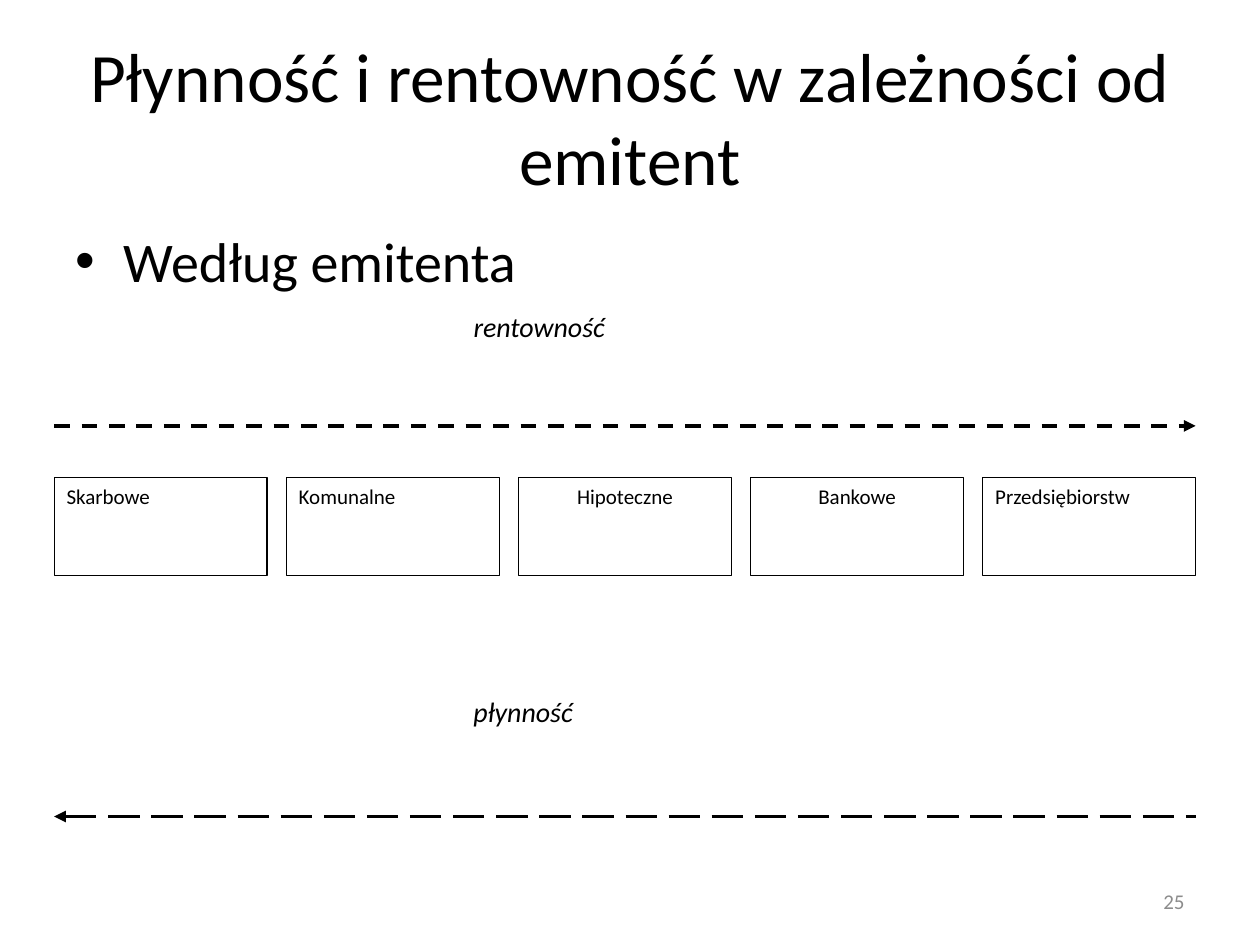
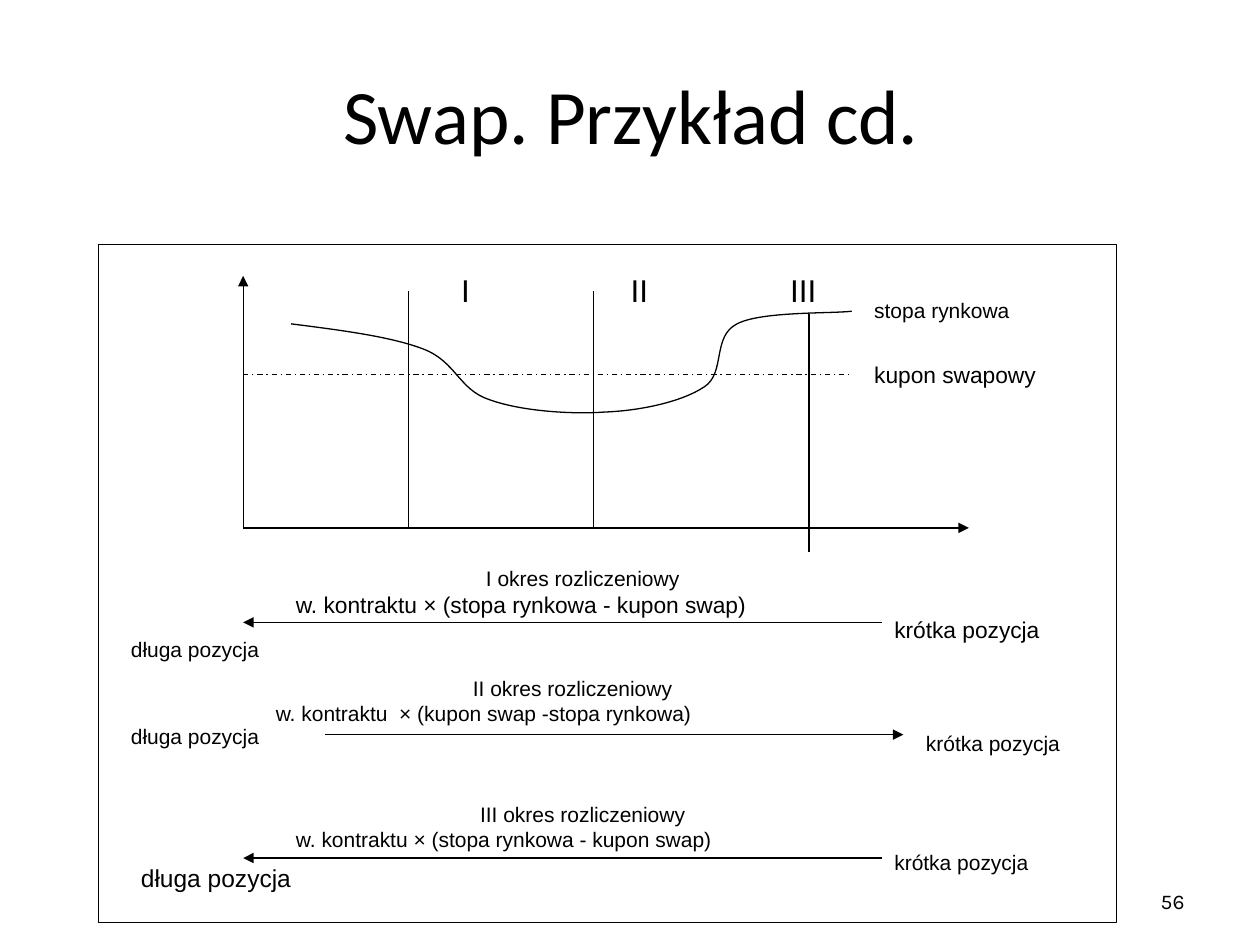
from lxml import etree
from pptx import Presentation
from pptx.dml.color import RGBColor
from pptx.enum.dml import MSO_LINE
from pptx.enum.shapes import MSO_CONNECTOR, MSO_SHAPE
from pptx.enum.text import MSO_ANCHOR, PP_ALIGN
from pptx.oxml.ns import qn
from pptx.util import Pt

SCALE = 9144  # EMU in one px, 100 px to the inch
BLANK_LAYOUT = 6
LEFT, CENTER, RIGHT = PP_ALIGN.LEFT, PP_ALIGN.CENTER, PP_ALIGN.RIGHT
TOP, MIDDLE = MSO_ANCHOR.TOP, MSO_ANCHOR.MIDDLE
DASH, LONG_DASH, DASH_DOT = MSO_LINE.DASH, MSO_LINE.LONG_DASH, MSO_LINE.DASH_DOT
START, END = "a:headEnd", "a:tailEnd"

BLACK, WHITE, GREY = "000000", "FFFFFF", "8C8C8C"
HEADING_FONT, DIAGRAM_FONT, NUMBER_FONT = "Calibri", "Arial", "Karla"
THIN, THICK = 0.75, 2.25
NUMBER_BOX = (717, 695, 233, 40)

# Slide 1: issuers
ISSUERS = [("Skarbowe", LEFT), ("Komunalne", LEFT), ("Hipoteczne", CENTER),
           ("Bankowe", CENTER), ("Przedsiębiorstw", LEFT)]
ROW_LEFT, ROW_RIGHT, ROW_TOP = 43, 949, 379
ISSUER_WIDTH, ISSUER_HEIGHT = 169, 78
# caption, its box, arrow height, dash, arrowhead end
SCALES = [("rentowność", (366, 241, 138, 63), 338, DASH, END),
          ("płynność", (366, 546, 107, 52), 648, LONG_DASH, START)]

# Slide 2: swap
FRAME = (78, 194, 808, 538)
AXIS_LEFT, AXIS_TOP, AXIS_BOTTOM, AXIS_RIGHT = 193, 219, 419, 769
COUPON_HEIGHT, COUPON_RIGHT = 297, 676
# numeral, its box, settlement date line: x, top, bottom
PERIODS = [("I", (350, 210, 39, 40), (324, 231, 419)),
           ("II", (484, 210, 47, 40), (471, 231, 419)),
           ("III", (610, 210, 55, 40), (642, 249, 438))]
# start point, then two control points and an end point for each curve
MARKET_RATE = [
    (231, 257),
    (270, 262), (310, 267), (336, 277),
    (362, 287), (364, 309), (388, 317),
    (412, 326), (452, 329), (480, 327),
    (508, 326), (541, 319), (559, 307),
    (576, 296), (565, 267), (585, 257),
    (604, 247), (659, 249), (676, 247),
]
LABELS = [
    ("stopa rynkowa", (684, 231, 196, 38), 12),
    ("kupon swapowy", (684, 281, 196, 38), 13),
    ("długa pozycja", (94, 500, 131, 33), 12),
    ("krótka pozycja", (700, 484, 174, 35), 13),
    ("długa pozycja", (94, 569, 131, 33), 12),
    ("krótka pozycja", (725, 575, 132, 30), 12),
    ("długa pozycja", (102, 680, 147, 33), 14),
    ("krótka pozycja", (700, 669, 147, 38), 12),
]
# heading, formula, formula size, box, arrow: left, right, y, arrowhead end
SETTLEMENTS = [
    ("I okres rozliczeniowy", "w. kontraktu × (stopa rynkowa - kupon swap)", 13,
     (225, 444, 475, 50), (193, 700, 494, START)),
    ("II okres rozliczeniowy", "w. kontraktu  × (kupon swap -stopa rynkowa)", 12,
     (209, 531, 491, 50), (258, 717, 583, END)),
    ("III okres rozliczeniowy", "w. kontraktu × (stopa rynkowa - kupon swap)", 12,
     (225, 631, 475, 50), (193, 700, 681, START)),
]


def px(value):
    return round(value * SCALE)


def color(value):
    return RGBColor.from_string(value)


def style_line(line, width, dash=None):
    line.color.rgb = color(BLACK)
    line.width = Pt(width)
    if dash:
        line.dash_style = dash


def add_rectangle(slide, box, fill=None, outlined=False):
    shape = slide.shapes.add_shape(MSO_SHAPE.RECTANGLE, *map(px, box))
    shape.shadow.inherit = False
    if fill:
        shape.fill.solid()
        shape.fill.fore_color.rgb = color(fill)
    else:
        shape.fill.background()
    if outlined:
        style_line(shape.line, THIN)
    else:
        shape.line.fill.background()
    return shape


def add_paragraph(shape, text, size, font, align=LEFT, ink=BLACK, italic=False, first=True):
    frame = shape.text_frame
    paragraph = frame.paragraphs[0] if first else frame.add_paragraph()
    paragraph.alignment = align
    run = paragraph.add_run()
    run.text = text
    run.font.size = Pt(size)
    run.font.name = font
    run.font.italic = italic
    run.font.color.rgb = color(ink)
    return paragraph


def prepare_text(shape, anchor=TOP):
    shape.text_frame.word_wrap = True
    shape.text_frame.vertical_anchor = anchor
    return shape


def add_label(slide, box, *text_style, outlined=False, **options):
    shape = prepare_text(add_rectangle(slide, box, WHITE, outlined))
    add_paragraph(shape, *text_style, **options)
    return shape


def add_text(slide, box, *text_style, anchor=TOP, **options):
    shape = prepare_text(slide.shapes.add_textbox(*map(px, box)), anchor)
    return add_paragraph(shape, *text_style, **options)


def add_line(slide, start, end, width=THIN, dash=None, arrow=None):
    connector = slide.shapes.add_connector(MSO_CONNECTOR.STRAIGHT, *map(px, start + end))
    style_line(connector.line, width, dash)
    if arrow:
        etree.SubElement(connector.line._get_or_add_ln(), qn(arrow), type="triangle")
    etree.SubElement(connector._element.spPr, qn("a:effectLst"))


def add_curve(slide, points):
    """Draw an open Bézier outline: every three points after the first are one curve."""
    first, *rest = [(px(x), px(y)) for x, y in points]
    builder = slide.shapes.build_freeform(*first)
    builder.add_line_segments(rest, close=False)
    curve = builder.convert_to_shape()
    segments = list(curve._element.iter(qn("a:lnTo")))
    for index in range(0, len(segments), 3):
        bezier = etree.SubElement(segments[index].getparent(), qn("a:cubicBezTo"))
        for segment in segments[index:index + 3]:
            bezier.append(segment[0])
            segment.getparent().remove(segment)
    curve.shadow.inherit = False
    curve.fill.background()
    style_line(curve.line, THIN)


def add_bullet(paragraph, indent):
    properties = paragraph._p.get_or_add_pPr()
    properties.set("marL", str(px(indent)))
    properties.set("indent", str(px(-indent)))
    etree.SubElement(properties, qn("a:buFont"), typeface=DIAGRAM_FONT)
    etree.SubElement(properties, qn("a:buChar"), char="•")


def start_slide(presentation, title, title_box, title_size, number, number_font, number_ink):
    slide = presentation.slides.add_slide(presentation.slide_layouts[BLANK_LAYOUT])
    add_text(slide, NUMBER_BOX, number, 12, number_font, RIGHT, number_ink, anchor=MIDDLE)
    add_text(slide, title_box, title, title_size, HEADING_FONT, CENTER, anchor=MIDDLE)
    return slide


def build_issuers(presentation):
    slide = start_slide(presentation, "Płynność i rentowność w zależności od emitent",
                        (50, 30, 900, 125), 39.6, "25", HEADING_FONT, GREY)
    add_bullet(add_text(slide, (50, 175, 900, 66), "Według emitenta", 32, HEADING_FONT), 38)

    pitch = (ROW_RIGHT - ROW_LEFT - ISSUER_WIDTH) / (len(ISSUERS) - 1)
    for index, (issuer, align) in enumerate(ISSUERS):
        box = (ROW_LEFT + index * pitch, ROW_TOP, ISSUER_WIDTH, ISSUER_HEIGHT)
        add_label(slide, box, issuer, 12, HEADING_FONT, align, outlined=True)

    for caption, box, height, dash, arrow in SCALES:
        add_label(slide, box, caption, 16, HEADING_FONT, italic=True)
        add_line(slide, (ROW_LEFT, height), (ROW_RIGHT, height), THICK, dash, arrow)


def build_swap(presentation):
    slide = start_slide(presentation, "Swap. Przykład cd.",
                        (51, 28, 900, 125), 44, "56", NUMBER_FONT, BLACK)
    add_rectangle(slide, FRAME, outlined=True)

    for text, box, size in LABELS:
        add_label(slide, box, text, size, DIAGRAM_FONT)
    for heading, formula, size, box, (left, right, height, arrow) in SETTLEMENTS:
        label = add_label(slide, box, heading, 12, DIAGRAM_FONT, CENTER)
        add_paragraph(label, formula, size, DIAGRAM_FONT, first=False)
        add_line(slide, (left, height), (right, height), arrow=arrow)

    add_line(slide, (AXIS_LEFT, AXIS_TOP), (AXIS_LEFT, AXIS_BOTTOM), arrow=START)
    add_line(slide, (AXIS_LEFT, AXIS_BOTTOM), (AXIS_RIGHT, AXIS_BOTTOM), arrow=END)
    add_line(slide, (AXIS_LEFT, COUPON_HEIGHT), (COUPON_RIGHT, COUPON_HEIGHT), dash=DASH_DOT)
    add_curve(slide, MARKET_RATE)
    for numeral, box, (x, top, bottom) in PERIODS:
        add_line(slide, (x, top), (x, bottom))
        add_text(slide, box, numeral, 18, DIAGRAM_FONT, CENTER)


def main():
    presentation = Presentation()
    presentation.slide_width, presentation.slide_height = px(1000), px(750)
    build_issuers(presentation)
    build_swap(presentation)
    presentation.save("out.pptx")


if __name__ == "__main__":
    main()
